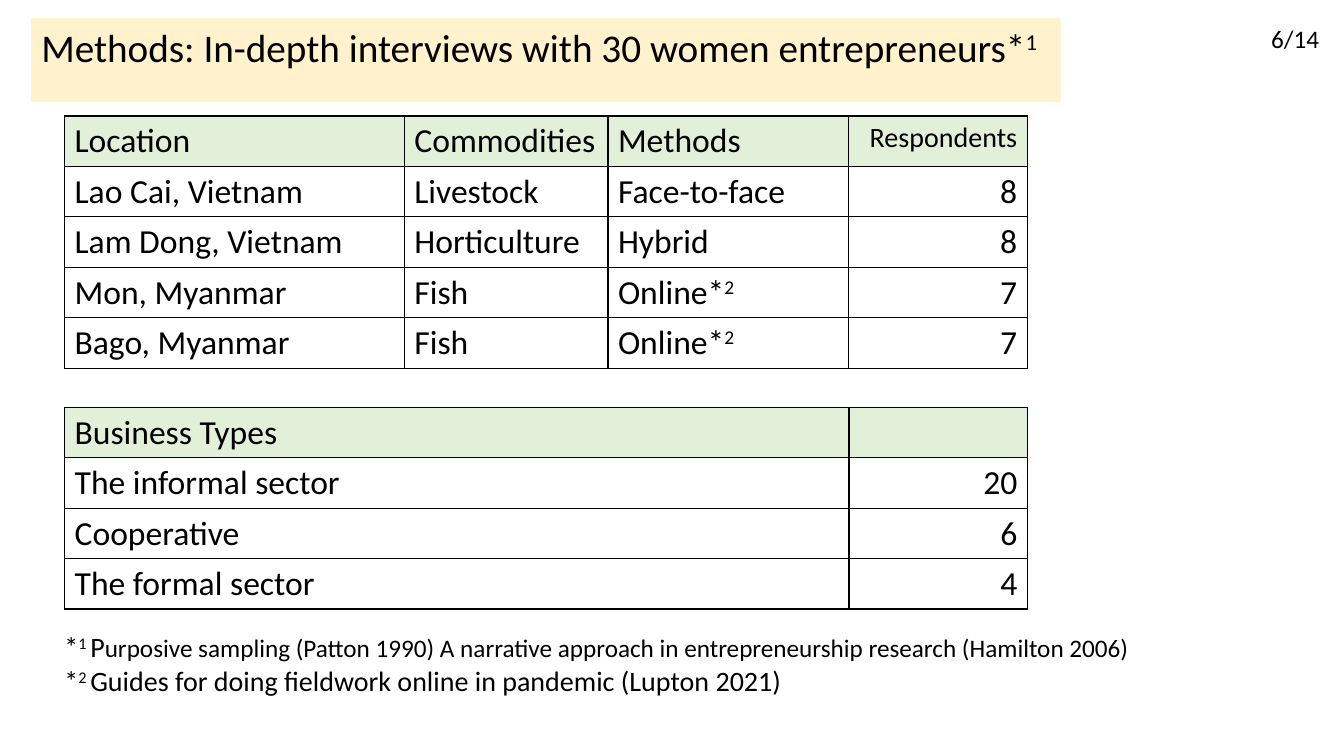
from dataclasses import dataclass

from lxml.etree import SubElement as Sub
from pptx import Presentation
from pptx.dml.color import RGBColor
from pptx.enum.text import MSO_ANCHOR as Anchor, MSO_AUTO_SIZE as Fit, PP_ALIGN as Align
from pptx.oxml.ns import qn
from pptx.util import Inches, Pt

BLACK, CREAM, GREEN = "000000", "FFF2CC", "E2F0D9"
LEFT, ROW = 0.64, 0.5


@dataclass
class Bit:
    """A stretch of text in one size, raised or on the line."""
    text: str
    size: int
    up: bool = False


@dataclass
class Grid:
    """A table whose last column is right-aligned."""
    top: float
    cols: list[float]
    rows: list[list[list[Bit]]]


def color(code: str) -> RGBColor:
    return RGBColor.from_string(code)


def bits(text: str, size: int = 24) -> list[Bit]:
    """Every second part between bars is raised."""
    return [Bit(part, size, n % 2 == 1)
            for n, part in enumerate(text.split("|")) if part]


def write(para, line: list[Bit], align=Align.LEFT) -> None:
    para.alignment = align
    for bit in line:
        run = para.add_run()
        run.text = bit.text
        form = {"name": "Calibri", "size": Pt(bit.size), "bold": False}
        for key, value in form.items():
            setattr(run.font, key, value)
        run.font.color.rgb = color(BLACK)
        if bit.up:
            run.font._element.set("baseline", "30000")


def fill_box(box, lines: list[list[Bit]]) -> None:
    frame = box.text_frame
    form = {"word_wrap": False, "auto_size": Fit.SHAPE_TO_FIT_TEXT,
            "vertical_anchor": Anchor.TOP}
    for key, value in form.items():
        setattr(frame, key, value)
    for n, line in enumerate(lines):
        write(frame.add_paragraph() if n else frame.paragraphs[0], line)


def add_box(slide, at: tuple[float, ...], lines: list[list[Bit]]) -> None:
    fill_box(slide.shapes.add_textbox(*map(Inches, at)), lines)


def frame_cell(cell) -> None:
    """Thin black borders, which must come before the fill."""
    props = cell._tc.get_or_add_tcPr()
    for side in ("lnL", "lnR", "lnT", "lnB"):
        edge = Sub(props, qn(f"a:{side}"), w=str(Pt(1)))
        paint = Sub(edge, qn("a:solidFill"))
        Sub(paint, qn("a:srgbClr"), val=BLACK)


def add_grid(slide, grid: Grid) -> None:
    count, last = len(grid.rows), len(grid.cols) - 1
    table = slide.shapes.add_table(
        count, last + 1, Inches(LEFT), Inches(grid.top),
        Inches(sum(grid.cols)), Inches(ROW * count)).table
    table.first_row = table.horz_banding = False
    for col, width in zip(table.columns, grid.cols):
        col.width = Inches(width)
    for r, row in enumerate(grid.rows):
        for c, line in enumerate(row):
            cell = table.cell(r, c)
            frame_cell(cell)
            if r == 0:
                cell.fill.solid()
                cell.fill.fore_color.rgb = color(GREEN)
            else:
                cell.fill.background()
            write(cell.text_frame.paragraphs[0], line,
                  Align.RIGHT if c == last else Align.LEFT)


PLACES = Grid(1.15, [3.37, 2.02, 2.39, 1.77], [
    [bits("Location"), bits("Commodities"), bits("Methods"), bits("Respondents", 20)],
    *[[bits(text) for text in row] for row in (
        ("Lao Cai, Vietnam", "Livestock", "Face-to-face", "8"),
        ("Lam Dong, Vietnam", "Horticulture", "Hybrid", "8"),
        ("Mon, Myanmar", "Fish", "Online*|2", "7"),
        ("Bago, Myanmar", "Fish", "Online*|2", "7"))],
])
TYPES = Grid(4.04, [7.78, 1.77], [
    [bits(text) for text in row] for row in (
        ("Business Types", ""), ("The informal sector", "20"),
        ("Cooperative", "6"), ("The formal sector", "4"))
])
NOTES = [
    [*bits("*|1 |P", 20),
     Bit("urposive sampling (Patton 1990) A narrative approach in "
         "entrepreneurship research (Hamilton 2006)", 18),
     Bit(" ", 20)],
    bits("*|2 |Guides for doing fieldwork online in pandemic (Lupton 2021)", 20),
]


def main() -> None:
    deck = Presentation()
    deck.slide_width, deck.slide_height = Inches(13.33), Inches(7.5)
    slide = deck.slides.add_slide(deck.slide_layouts[5])

    # Title band
    title = slide.shapes.title
    spot = {"left": 0.31, "top": 0.18, "width": 10.21, "height": 0.57}
    for key, value in spot.items():
        setattr(title, key, Inches(value))
    title.fill.solid()
    title.fill.fore_color.rgb = color(CREAM)
    fill_box(title, [bits("Methods: In-depth interviews with 30 women entrepreneurs*|1", 28)])

    # Tables
    for grid in (PLACES, TYPES):
        add_grid(slide, grid)

    # Footnotes and page number
    add_box(slide, (0.54, 6.2, 11, 0.77), NOTES)
    add_box(slide, (12.51, 0.18, 0.68, 0.4), [bits("6/14", 18)])

    deck.save("out.pptx")


if __name__ == "__main__":
    main()
